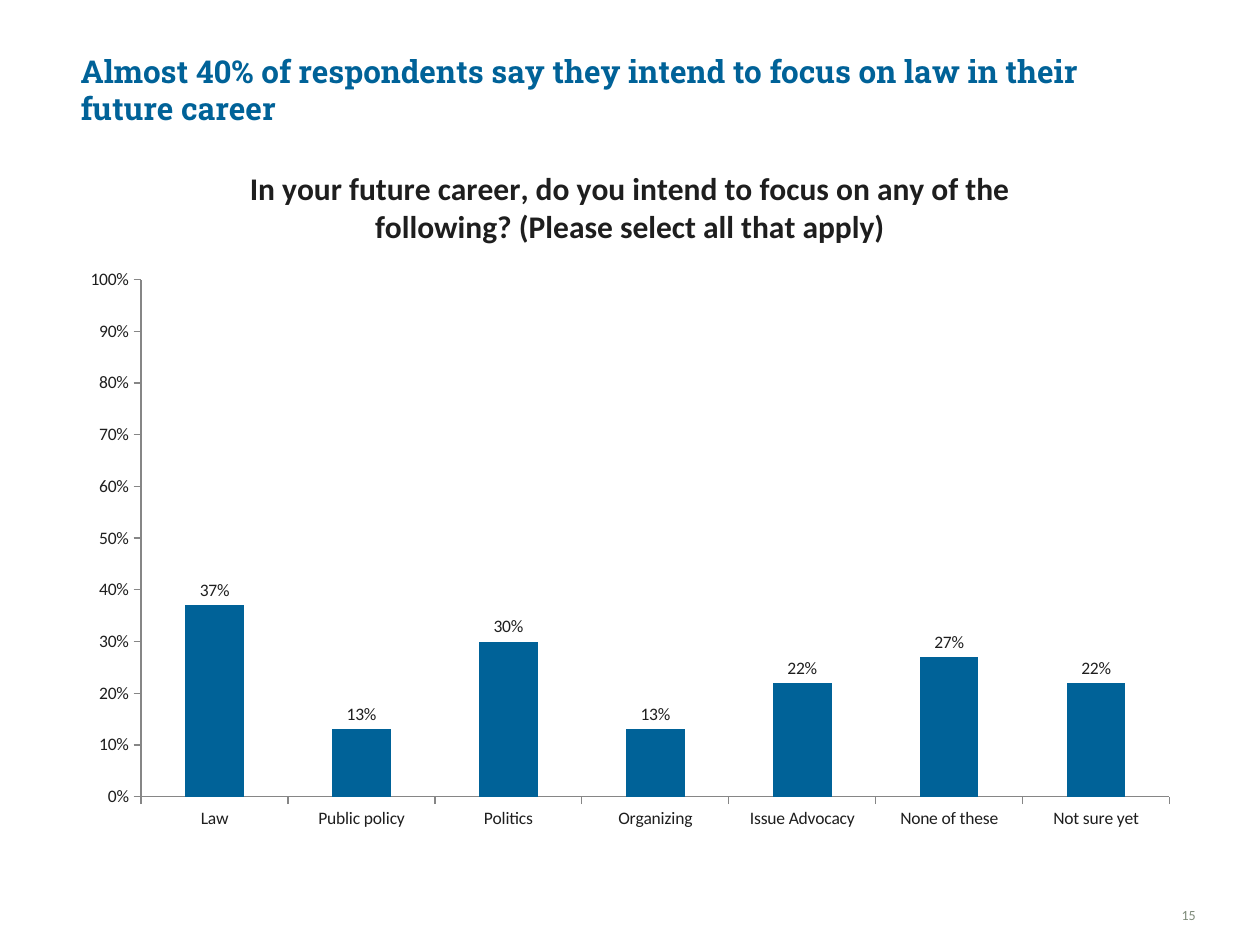
"""Build a survey slide with a headline, a column chart and a page number."""
from dataclasses import dataclass

from pptx import Presentation
from pptx.chart.data import CategoryChartData
from pptx.dml.color import RGBColor
from pptx.enum.chart import XL_CHART_TYPE, XL_LABEL_POSITION, XL_TICK_MARK
from pptx.enum.text import MSO_ANCHOR, MSO_AUTO_SIZE, PP_ALIGN
from pptx.util import Inches, Pt

WIDTH, HEIGHT = Inches(10), Inches(7.5)
BLUE, INK, AXIS_GRAY, PAGE_GRAY = "006298", "1E1E1E", "868686", "7E8B7A"
BODY_FONT, TITLE_FONT = "Calibri", "Roboto Slab"
HEADLINE = "Almost 40% of respondents say they intend to focus on law in their future career"
QUESTION = ("In your future career, do you intend to focus on any of the following? "
            "(Please select all that apply)")
ANSWERS = {
    "Law": 0.37,
    "Public policy": 0.13,
    "Politics": 0.30,
    "Organizing": 0.13,
    "Issue Advocacy": 0.22,
    "None of these": 0.27,
    "Not sure yet": 0.22,
}


@dataclass(frozen=True)
class Area:
    """A rectangle in percent of the slide's width and height."""
    left: float
    top: float
    width: float
    height: float

    def lengths(self) -> tuple[int, int, int, int]:
        """Return left, top, width and height as slide lengths."""
        return (int(WIDTH * self.left / 100), int(HEIGHT * self.top / 100),
                int(WIDTH * self.width / 100), int(HEIGHT * self.height / 100))


TITLE_AREA = Area(5.4, 4.8, 86.7, 9.33)
CHART_AREA = Area(5.4, 14.8, 89.2, 74.4)
NUMBER_AREA = Area(89.7, 94.27, 5.2, 3.47)


def color(value: str) -> RGBColor:
    """Turn a hex string into a colour."""
    return RGBColor.from_string(value)


def style_font(font, name: str, size: float, value: str, bold: bool = False) -> None:
    """Set the typeface, size, colour and weight of a font."""
    font.name, font.size, font.bold = name, Pt(size), bold
    font.color.rgb = color(value)


def set_title(page) -> None:
    """Place and format the headline."""
    title = page.shapes.title
    title.left, title.top, title.width, title.height = TITLE_AREA.lengths()
    frame = title.text_frame
    frame.text = HEADLINE
    frame.auto_size = MSO_AUTO_SIZE.NONE
    frame.vertical_anchor = MSO_ANCHOR.MIDDLE
    paragraph = frame.paragraphs[0]
    paragraph.alignment = PP_ALIGN.LEFT
    style_font(paragraph.font, TITLE_FONT, 18, BLUE, True)


def add_page_number(page, number: str) -> None:
    """Add the page number at the lower right."""
    frame = page.shapes.add_textbox(*NUMBER_AREA.lengths()).text_frame
    frame.word_wrap = True
    frame.margin_left = frame.margin_right = frame.margin_top = frame.margin_bottom = 0
    frame.vertical_anchor = MSO_ANCHOR.BOTTOM
    frame.text = number
    paragraph = frame.paragraphs[0]
    paragraph.alignment = PP_ALIGN.RIGHT
    style_font(paragraph.font, BODY_FONT, 8, PAGE_GRAY)


def style_axis(axis) -> None:
    """Give an axis outside ticks and a thin gray line, without gridlines."""
    axis.has_major_gridlines = False
    axis.major_tick_mark = XL_TICK_MARK.OUTSIDE
    axis.minor_tick_mark = XL_TICK_MARK.NONE
    axis.format.line.color.rgb = color(AXIS_GRAY)
    axis.format.line.width = Pt(0.75)


def add_answer_chart(page) -> None:
    """Add the column chart of answer shares."""
    data = CategoryChartData(number_format="0%")
    data.categories = list(ANSWERS)
    data.add_series("Series 1", list(ANSWERS.values()))
    chart = page.shapes.add_chart(
        XL_CHART_TYPE.COLUMN_CLUSTERED, *CHART_AREA.lengths(), data).chart
    style_font(chart.font, BODY_FONT, 10, INK)
    chart.has_legend = False
    chart.has_title = True
    chart.chart_title.include_in_layout = False
    frame = chart.chart_title.text_frame
    frame.text = QUESTION
    style_font(frame.paragraphs[0].font, BODY_FONT, 18, INK, True)

    for axis in (chart.category_axis, chart.value_axis):
        style_axis(axis)
    scale = chart.value_axis
    scale.minimum_scale, scale.maximum_scale, scale.major_unit = 0, 1, 0.1
    scale.tick_labels.number_format = "0%"
    scale.tick_labels.number_format_is_linked = False

    plot = chart.plots[0]
    plot.gap_width = 150
    plot.vary_by_categories = False
    fill = plot.series[0].format.fill
    fill.solid()
    fill.fore_color.rgb = color(BLUE)
    labels = plot.series[0].data_labels
    labels.show_value = True
    labels.number_format = "0%"
    labels.number_format_is_linked = False
    labels.position = XL_LABEL_POSITION.OUTSIDE_END
    style_font(labels.font, BODY_FONT, 10, INK)


def main() -> None:
    """Build and save the deck."""
    deck = Presentation()
    deck.slide_width, deck.slide_height = WIDTH, HEIGHT
    page = deck.slides.add_slide(deck.slide_layouts.get_by_name("Title Only"))
    page.background.fill.solid()
    page.background.fill.fore_color.rgb = color("FFFFFF")
    set_title(page)
    add_page_number(page, "15")
    add_answer_chart(page)
    deck.save("out.pptx")


if __name__ == "__main__":
    main()
